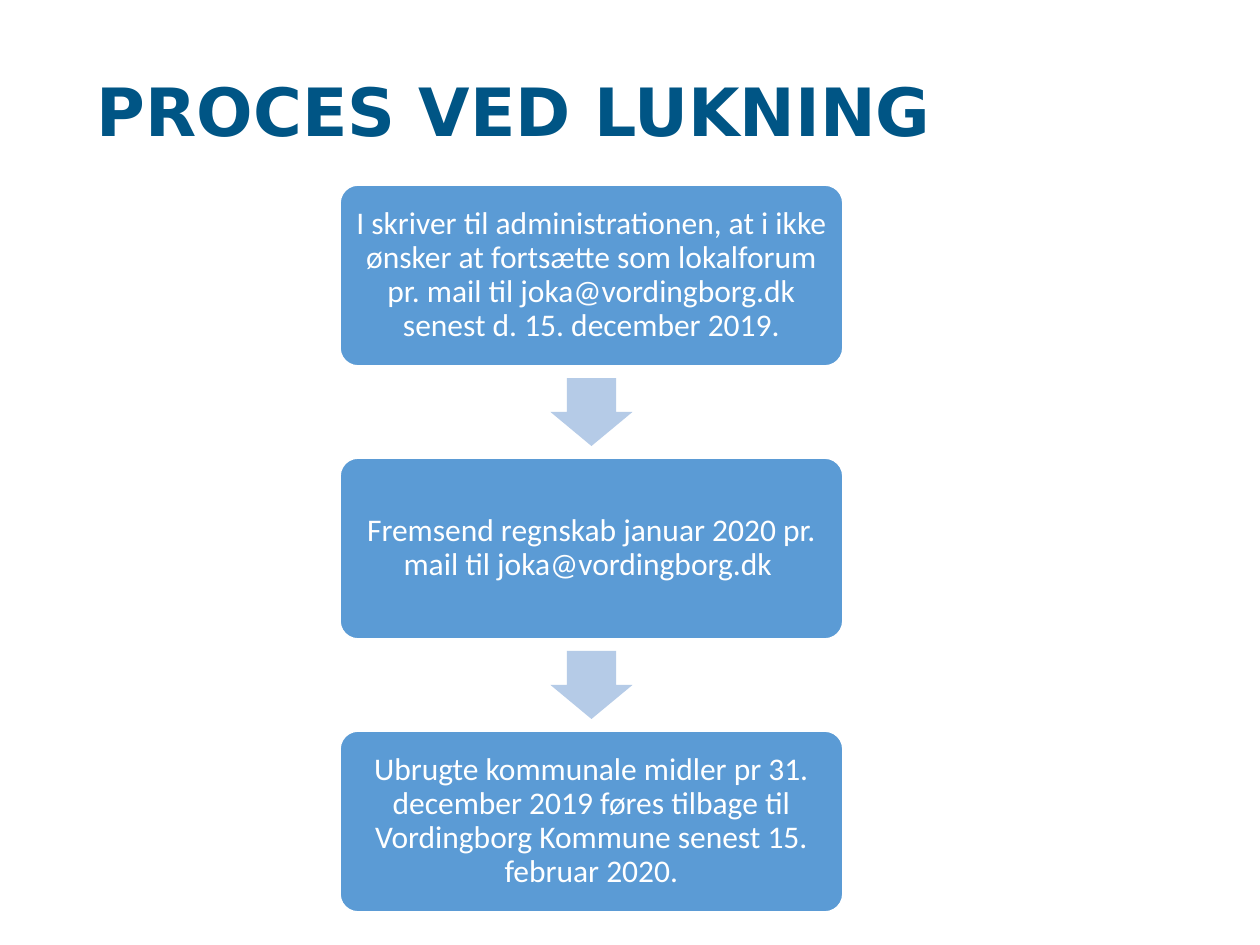
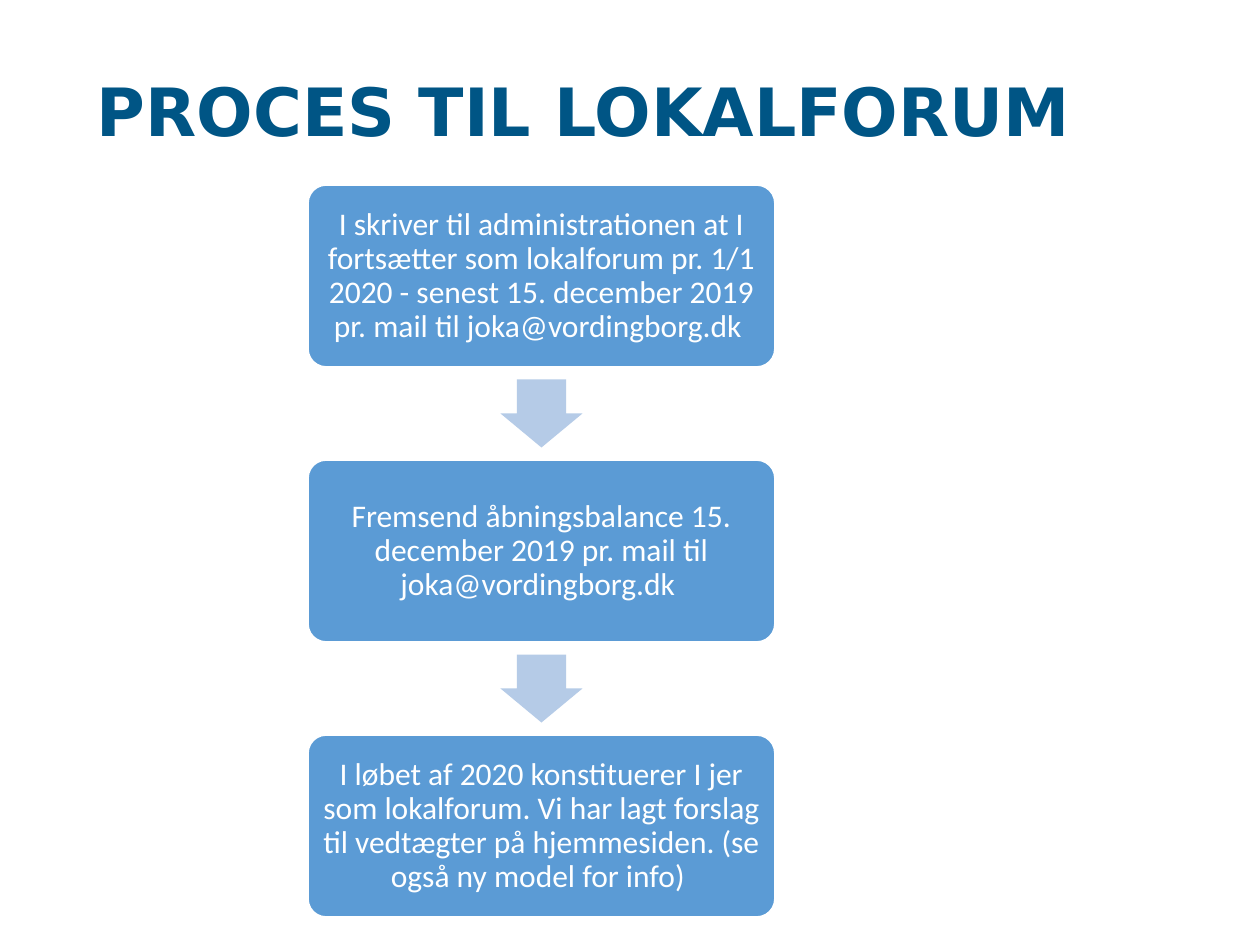
"""Build two process slides for local forums: closing down and continuing."""
from pptx import Presentation
from pptx.dml.color import RGBColor
from pptx.enum.shapes import MSO_SHAPE
from pptx.enum.text import MSO_ANCHOR, PP_ALIGN
from pptx.util import Emu, Pt

TITLE_BLUE = RGBColor(0x00, 0x55, 0x85)
STEP_BLUE = RGBColor(0x5B, 0x9B, 0xD5)
ARROW_BLUE = RGBColor(0xB5, 0xCB, 0xE7)
WHITE = RGBColor(0xFF, 0xFF, 0xFF)
STEPS_TOP = 185
ARROW_WIDTH, ARROW_HEIGHT = 82, 68
STEP_MARGIN = 9

PROCESSES = [
    ("PROCES VED LUKNING", 340, 503, 181, 273, [
        "I skriver til administrationen, at i ikke ønsker at fortsætte som lokalforum "
        "pr. mail til joka@vordingborg.dk senest d. 15. december 2019.",
        "Fremsend regnskab januar 2020 pr. mail til joka@vordingborg.dk ",
        "Ubrugte kommunale midler pr 31. december 2019 føres tilbage til "
        "Vordingborg Kommune senest 15. februar 2020.",
    ]),
    ("PROCES TIL LOKALFORUM", 308, 467, 182, 275, [
        "I skriver til administrationen at I fortsætter som lokalforum pr. 1/1 2020 "
        "- senest 15. december 2019 pr. mail til joka@vordingborg.dk ",
        "Fremsend åbningsbalance 15. december 2019 pr. mail til joka@vordingborg.dk ",
        "I løbet af 2020 konstituerer I jer som lokalforum. Vi har lagt forslag til "
        "vedtægter på hjemmesiden. (se også ny model for info) ",
    ]),
]


def px(*lengths):
    return [Emu(round(length * 914400 / 126)) for length in lengths]


def write(frame, text, margin, font_name, size, color, spacing):
    frame.word_wrap = True
    frame.margin_left, frame.margin_top, frame.margin_right, frame.margin_bottom = px(*[margin] * 4)
    frame.text = text
    paragraph = frame.paragraphs[0]
    paragraph.line_spacing = spacing
    font = paragraph.runs[0].font
    font.name, font.size, font.color.rgb = font_name, Pt(size), color
    return paragraph


prs = Presentation()
prs.slide_width, prs.slide_height = px(1260, 945)

for heading, left, width, height, pitch, steps in PROCESSES:
    slide = prs.slides.add_slide(prs.slide_layouts[6])
    title = slide.shapes.add_textbox(*px(97, 94, 1089, 135))
    line = write(title.text_frame, heading, 0, "DejaVu Sans", 38, TITLE_BLUE, Pt(32))
    line.runs[0].font.bold = True

    for index, wording in enumerate(steps):
        top = STEPS_TOP + index * pitch
        step = slide.shapes.add_shape(MSO_SHAPE.ROUNDED_RECTANGLE, *px(left, top, width, height))
        step.adjustments[0] = 0.1
        step.shadow.inherit = False
        step.fill.solid()
        step.fill.fore_color.rgb = STEP_BLUE
        step.line.color.rgb = WHITE
        step.line.width = Pt(1)
        step.text_frame.vertical_anchor = MSO_ANCHOR.MIDDLE
        body = write(step.text_frame, wording, STEP_MARGIN, "Calibri", 18, WHITE, 0.9)
        body.alignment = PP_ALIGN.CENTER

        if index < len(steps) - 1:
            arrow_left = left + (width - ARROW_WIDTH) / 2
            arrow_top = top + (height + pitch - ARROW_HEIGHT) / 2
            arrow = slide.shapes.add_shape(
                MSO_SHAPE.DOWN_ARROW, *px(arrow_left, arrow_top, ARROW_WIDTH, ARROW_HEIGHT))
            arrow.adjustments[0] = 0.6
            arrow.adjustments[1] = 0.5
            arrow.shadow.inherit = False
            arrow.fill.solid()
            arrow.fill.fore_color.rgb = ARROW_BLUE
            arrow.line.fill.background()

prs.save("out.pptx")
